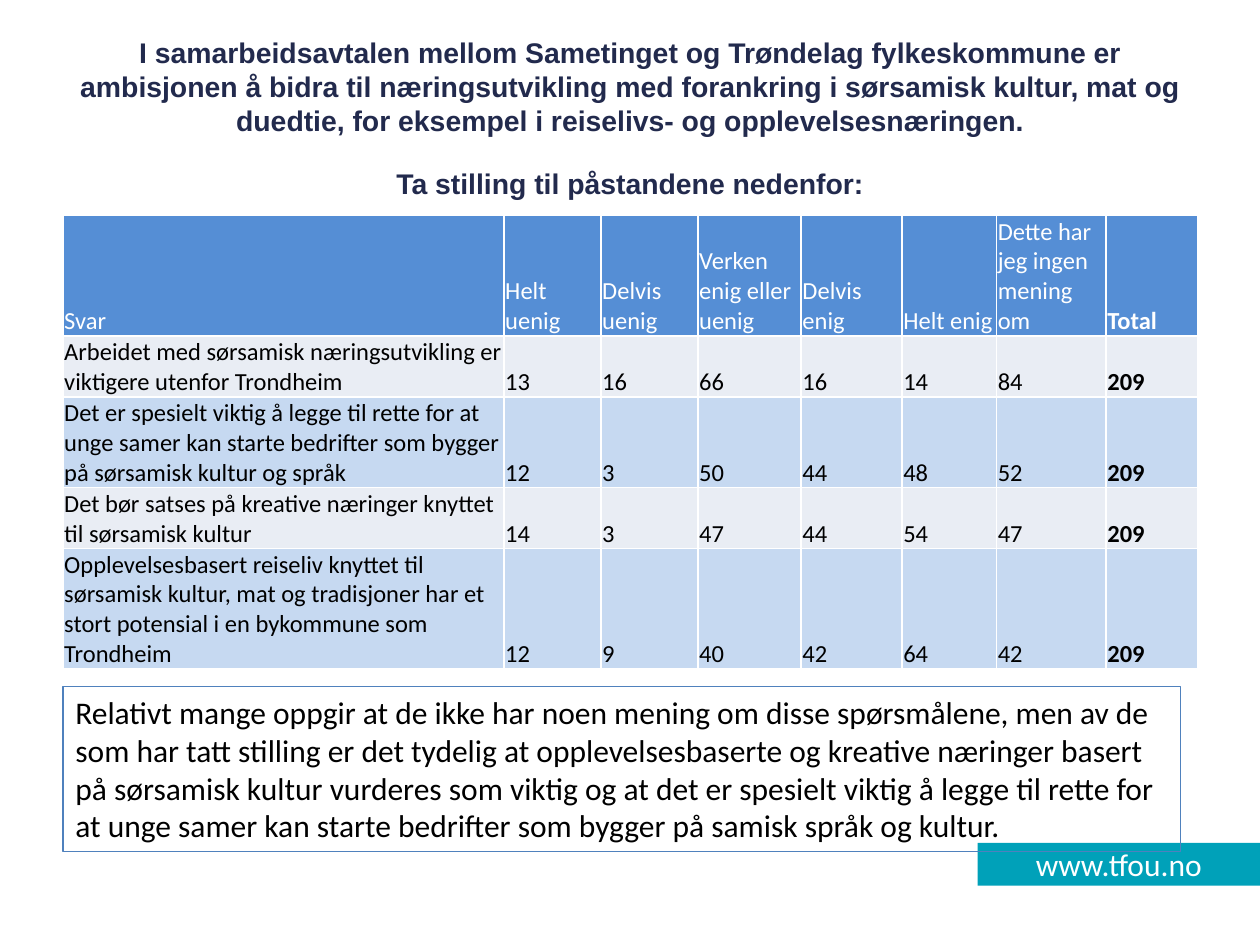
from dataclasses import dataclass

from lxml import etree
from pptx import Presentation
from pptx.dml.color import RGBColor
from pptx.enum.shapes import MSO_SHAPE
from pptx.enum.text import MSO_ANCHOR, PP_ALIGN
from pptx.oxml.ns import qn
from pptx.util import Inches, Pt

RECT = MSO_SHAPE.RECTANGLE
MIDDLE, BOTTOM, TOP = MSO_ANCHOR.MIDDLE, MSO_ANCHOR.BOTTOM, MSO_ANCHOR.TOP
LEFT, CENTER = PP_ALIGN.LEFT, PP_ALIGN.CENTER


@dataclass(frozen=True)
class Theme:
    head: str = "Arial"
    body: str = "Calibri"
    navy: str = "222A4D"
    teal: str = "00A1B9"
    blue: str = "558ED5"
    edge: str = "4F81BD"
    pale: str = "E9EDF4"
    sky: str = "C6D9F1"
    white: str = "FFFFFF"
    black: str = "000000"
    title: float = 16.2
    cell: float = 14
    text: float = 18


def put(item, values):
    for name, value in values.items():
        setattr(item, name, value)


class Page:
    columns, rows = 40, 30

    def __init__(self, deck, theme):
        self.theme = theme
        self.slide = deck.slides.add_slide(deck.slide_layouts[5])
        self.unit_x = deck.slide_width / self.columns
        self.unit_y = deck.slide_height / self.rows

    def x(self, count):
        return round(count * self.unit_x)

    def y(self, count):
        return round(count * self.unit_y)

    def area(self, left, top, width, height):
        return self.x(left), self.y(top), self.x(width), self.y(height)

    def label(self, para, text, size, color, face, bold=False):
        run = para.add_run()
        run.text = text
        put(run.font, {"size": Pt(size), "name": face, "bold": bold})
        run.font.color.rgb = RGBColor.from_string(color)

    def title(self, area, lines, pitch, gap):
        shape = self.slide.shapes.title
        put(shape, dict(zip(("left", "top", "width", "height"), self.area(*area))))
        frame = shape.text_frame
        put(frame, {"word_wrap": True, "vertical_anchor": MIDDLE})
        for index, line in enumerate(lines):
            para = frame.add_paragraph() if index else frame.paragraphs[0]
            put(para, {"alignment": CENTER, "line_spacing": Pt(pitch),
                       "space_before": Pt(gap if index else 0)})
            self.label(para, line, self.theme.title, self.theme.navy,
                       self.theme.head, True)

    def box(self, area, text, color, fill=None, line=None, align=LEFT, anchor=TOP):
        shape = self.slide.shapes.add_shape(RECT, *self.area(*area))
        shape.shadow.inherit = False
        if fill:
            shape.fill.solid()
            shape.fill.fore_color.rgb = RGBColor.from_string(fill)
        else:
            shape.fill.background()
        if line:
            shape.line.color.rgb = RGBColor.from_string(line)
            shape.line.width = Pt(0.75)
        else:
            shape.line.fill.background()
        frame = shape.text_frame
        put(frame, {"word_wrap": True, "vertical_anchor": anchor})
        para = frame.paragraphs[0]
        para.alignment = align
        self.label(para, text, self.theme.text, color, self.theme.body)

    def border(self, cell):
        props = cell._tc.get_or_add_tcPr()
        for index, side in enumerate(("lnL", "lnR", "lnT", "lnB")):
            edge = etree.Element(qn("a:" + side), w=str(Pt(1)))
            fill = etree.SubElement(edge, qn("a:solidFill"))
            etree.SubElement(fill, qn("a:srgbClr"), val=self.theme.white)
            props.insert(index, edge)

    def table(self, left, top, widths, heights, data):
        area = self.area(left, top, sum(widths), sum(heights))
        grid = self.slide.shapes.add_table(len(data), len(widths), *area).table
        for column, width in zip(grid.columns, widths):
            column.width = self.x(width)
        for row, height in zip(grid.rows, heights):
            row.height = self.y(height)
        look = self.theme
        inset = Inches(0.01)
        for i, values in enumerate(data):
            fill = (look.pale if i % 2 else look.sky) if i else look.blue
            color = look.black if i else look.white
            for j, value in enumerate(values):
                cell = grid.cell(i, j)
                put(cell, {"margin_left": inset, "margin_right": inset,
                           "margin_top": inset, "margin_bottom": 0,
                           "vertical_anchor": BOTTOM})
                cell.fill.solid()
                cell.fill.fore_color.rgb = RGBColor.from_string(fill)
                self.border(cell)
                self.label(cell.text_frame.paragraphs[0], str(value), look.cell,
                           color, look.body, j == len(values) - 1)


TITLE = (
    "I samarbeidsavtalen mellom Sametinget og Trøndelag fylkeskommune er "
    "ambisjonen å bidra til næringsutvikling med forankring i sørsamisk kultur, "
    "mat og duedtie, for eksempel i reiselivs- og opplevelsesnæringen.",
    "Ta stilling til påstandene nedenfor:",
)
DATA = (
    ("Svar", "Helt uenig", "Delvis uenig", "Verken enig eller uenig",
     "Delvis enig", "Helt enig", "Dette har jeg ingen mening om", "Total"),
    ("Arbeidet med sørsamisk næringsutvikling er viktigere utenfor Trondheim",
     13, 16, 66, 16, 14, 84, 209),
    ("Det er spesielt viktig å legge til rette for at unge samer kan starte "
     "bedrifter som bygger på sørsamisk kultur og språk",
     12, 3, 50, 44, 48, 52, 209),
    ("Det bør satses på kreative næringer knyttet til sørsamisk kultur",
     14, 3, 47, 44, 54, 47, 209),
    ("Opplevelsesbasert reiseliv knyttet til sørsamisk kultur, mat og "
     "tradisjoner har et stort potensial i en bykommune som Trondheim",
     12, 9, 40, 42, 64, 42, 209),
)
WIDTHS = (14, 3.08, 3.08, 3.28, 3.2, 3, 3.48, 2.92)
HEIGHTS = [lines * 0.95 for lines in (4, 2, 3, 2, 4)]
NOTE = (
    "Relativt mange oppgir at de ikke har noen mening om disse spørsmålene, men "
    "av de som har tatt stilling er det tydelig at opplevelsesbaserte og kreative "
    "næringer basert på sørsamisk kultur vurderes som viktig og at det er spesielt "
    "viktig å legge til rette for at unge samer kan starte bedrifter som bygger på "
    "samisk språk og kultur."
)


def main():
    deck = Presentation()
    put(deck, {"slide_width": Inches(10), "slide_height": Inches(7.5)})
    theme = Theme()
    page = Page(deck, theme)
    page.box((31.04, 26.76, 8.96, 1.36), "www.tfou.no", theme.white,
             fill=theme.teal, align=CENTER, anchor=MIDDLE)
    page.title((2, 1.24, 36, 5), TITLE, 19.4, 17)
    page.table(2, 6.84, WIDTHS, HEIGHTS, DATA)
    page.box((2, 21.8, 35.48, 5.24), NOTE, theme.black, line=theme.edge)
    deck.save("out.pptx")


if __name__ == "__main__":
    main()
